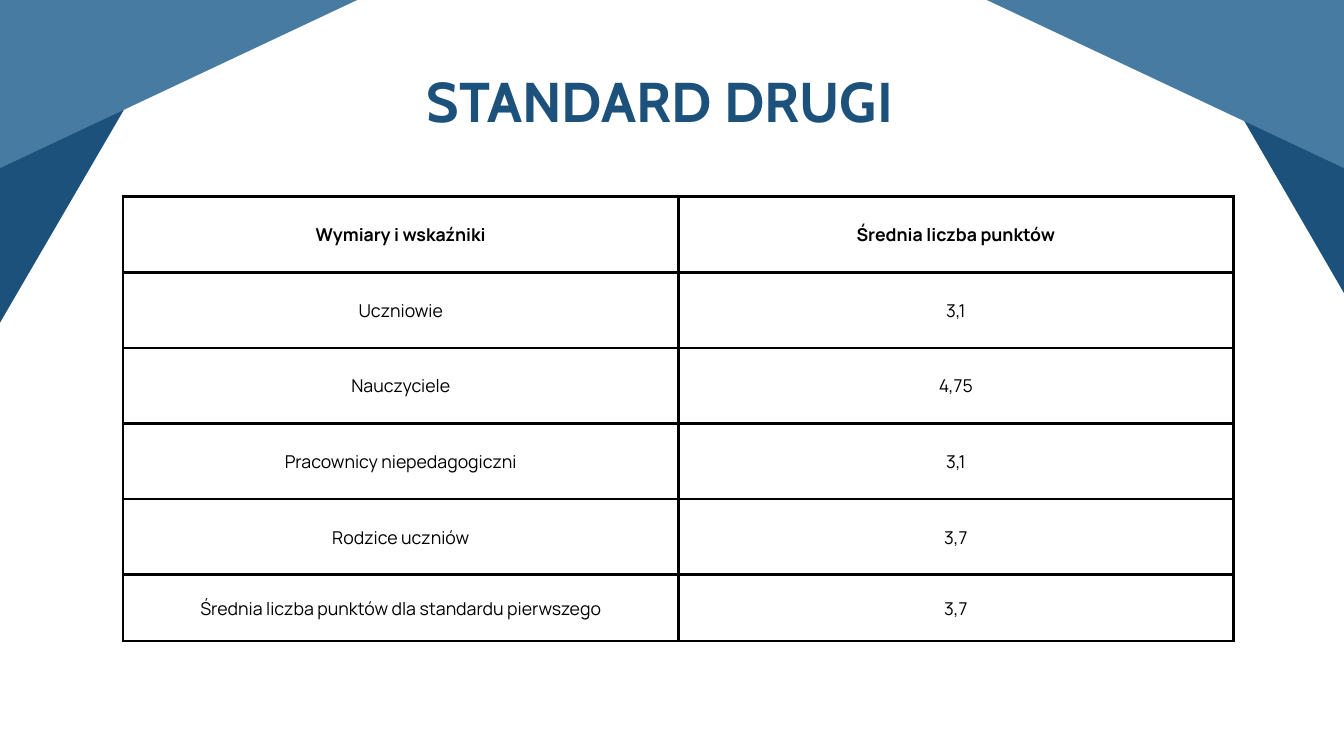
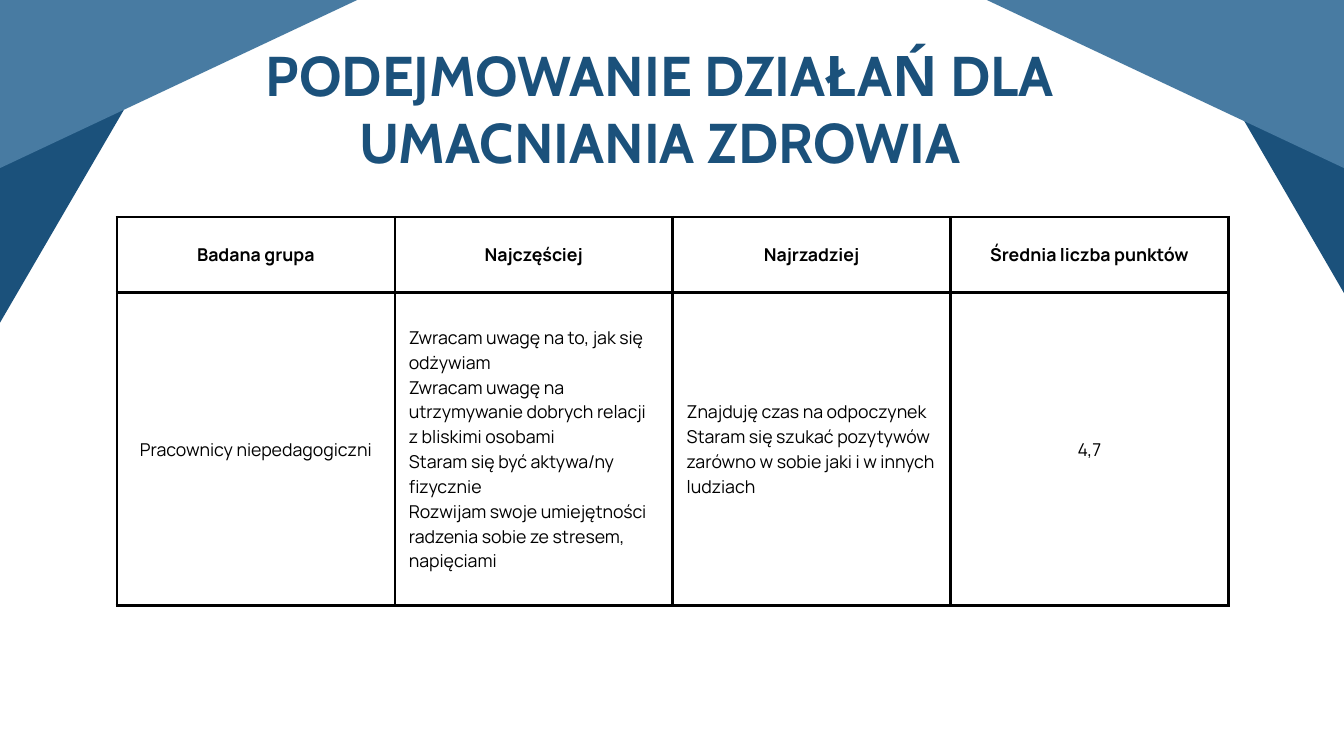
from lxml.etree import SubElement
from pptx import Presentation
from pptx.dml.color import RGBColor
from pptx.enum.shapes import MSO_SHAPE as Preset
from pptx.enum.text import MSO_ANCHOR as Anchor, MSO_AUTO_SIZE as AutoSize, PP_ALIGN as Align
from pptx.oxml.ns import qn
from pptx.util import Emu, Pt

PX = 9525
COLORS = {"dark": "1B517B", "light": "487BA2", "line": "000000", "text": "000000"}
TITLE_FONT = {"name": "Cabin", "size": Pt(60), "bold": True}
CELL_FONT = {"name": "Manrope", "size": Pt(19)}
TITLE_FRAME = {"margin_left": 0, "margin_top": 0, "margin_right": 0, "margin_bottom": 0,
               "word_wrap": True, "auto_size": AutoSize.SHAPE_TO_FIT_TEXT,
               "vertical_anchor": Anchor.TOP}
CELL_FORMAT = {"margin_left": 20 * PX, "margin_top": 20 * PX, "margin_right": 20 * PX,
               "margin_bottom": 20 * PX, "vertical_anchor": Anchor.MIDDLE}
BORDER_WIDTH = Pt(3)

# Corner bands: colour, left, top, width, height, rotation
BANDS = [
    ("dark", 1665, -724, 270, 1333, 329.9),
    ("dark", -146, -979, 426, 1803, 30.2),
    ("light", 1, -530, 426, 868, 244.8),
    ("light", 1493, -530, 426, 868, 295.2),
]

SLIDES = [
    {
        "title": "STANDARD DRUGI",
        "title_box": (268, 95, 1349, 98),
        "table_at": (176, 281),
        "column_width": 793,
        "row_heights": [108] * 5 + [95],
        "rows": [
            ["Wymiary i wskaźniki", "Średnia liczba punktów"],
            ["Uczniowie", "3,1"],
            ["Nauczyciele", "4,75"],
            ["Pracownicy niepedagogiczni", "3,1"],
            ["Rodzice uczniów", "3,7"],
            ["Średnia liczba punktów dla standardu pierwszego", "3,7"],
        ],
    },
    {
        "title": "PODEJMOWANIE DZIAŁAŃ DLA UMACNIANIA ZDROWIA",
        "title_box": (268, 58, 1349, 194),
        "table_at": (167, 310),
        "column_width": 397,
        "row_heights": [108, 447],
        "rows": [
            ["Badana grupa", "Najczęściej", "Najrzadziej", "Średnia liczba punktów"],
            [
                "Pracownicy niepedagogiczni",
                "Zwracam uwagę na to, jak się odżywiam\n"
                "Zwracam uwagę na utrzymywanie dobrych relacji z bliskimi osobami\n"
                "Staram się być aktywa/ny fizycznie\n"
                "Rozwijam swoje umiejętności radzenia sobie ze stresem, napięciami",
                "Znajduję czas na odpoczynek\n"
                "Staram się szukać pozytywów zarówno w sobie jaki i w innych ludziach",
                "4,7",
            ],
        ],
    },
]


def apply(target, values):
    for name, value in values.items():
        setattr(target, name, value)


def format_paragraph(paragraph, alignment, spacing, font, color):
    apply(paragraph, {"alignment": alignment, "line_spacing": Pt(spacing)})
    apply(paragraph.runs[0].font, font)
    paragraph.runs[0].font.color.rgb = RGBColor.from_string(COLORS[color])


presentation = Presentation()
presentation.slide_width = Emu(1920 * PX)
presentation.slide_height = Emu(1080 * PX)
title_only = presentation.slide_layouts[5]

for content in SLIDES:
    slide = presentation.slides.add_slide(title_only)

    title = slide.shapes.title
    box = [Emu(length * PX) for length in content["title_box"]]
    apply(title, dict(zip(("left", "top", "width", "height"), box)))
    title.text_frame.text = content["title"]
    apply(title.text_frame, TITLE_FRAME)
    format_paragraph(title.text_frame.paragraphs[0], Align.CENTER, 72, TITLE_FONT, "dark")

    for color, *box, rotation in BANDS:
        band = slide.shapes.add_shape(Preset.RECTANGLE, *(Emu(length * PX) for length in box))
        band.rotation = rotation
        band.shadow.inherit = False
        band.fill.solid()
        band.fill.fore_color.rgb = RGBColor.from_string(COLORS[color])
        band.line.fill.background()

    rows, heights = content["rows"], content["row_heights"]
    left, top = content["table_at"]
    width = content["column_width"]
    column_count = len(rows[0])
    table = slide.shapes.add_table(
        len(rows), column_count, Emu(left * PX), Emu(top * PX),
        Emu(width * column_count * PX), Emu(sum(heights) * PX)).table
    apply(table, {"first_row": False, "horz_banding": False})
    for column in table.columns:
        column.width = Emu(width * PX)

    for row_index, (texts, height) in enumerate(zip(rows, heights)):
        table.rows[row_index].height = Emu(height * PX)
        for column_index, text in enumerate(texts):
            cell = table.cell(row_index, column_index)
            cell.text = text
            apply(cell, CELL_FORMAT)
            properties = cell._tc.get_or_add_tcPr()
            for side in ("lnL", "lnR", "lnT", "lnB"):
                border = SubElement(properties, qn(f"a:{side}"), w=str(BORDER_WIDTH))
                fill = SubElement(border, qn("a:solidFill"))
                SubElement(fill, qn("a:srgbClr"), val=COLORS["line"])
            cell.fill.background()

            font = {**CELL_FONT, "bold": row_index == 0}
            alignment = Align.LEFT if "\n" in text else Align.CENTER
            for paragraph in cell.text_frame.paragraphs:
                format_paragraph(paragraph, alignment, 26.6, font, "text")

presentation.save("out.pptx")
